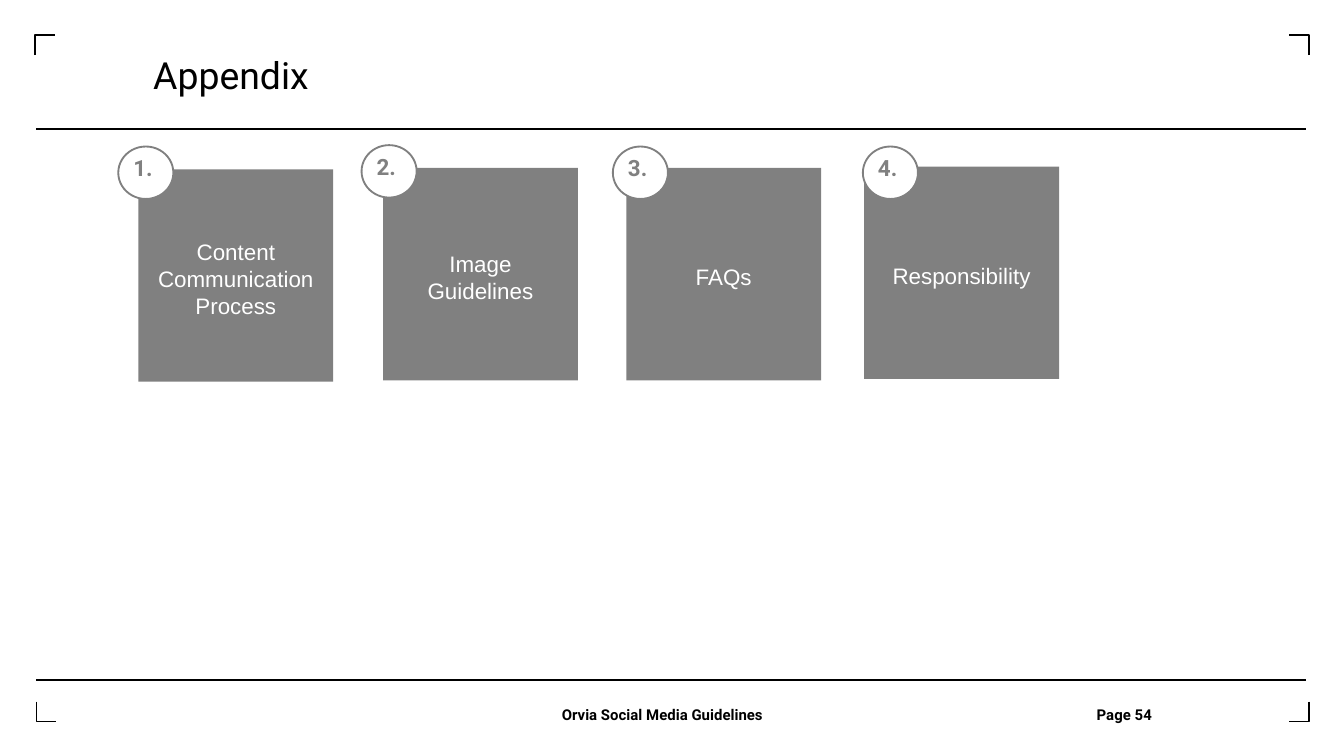
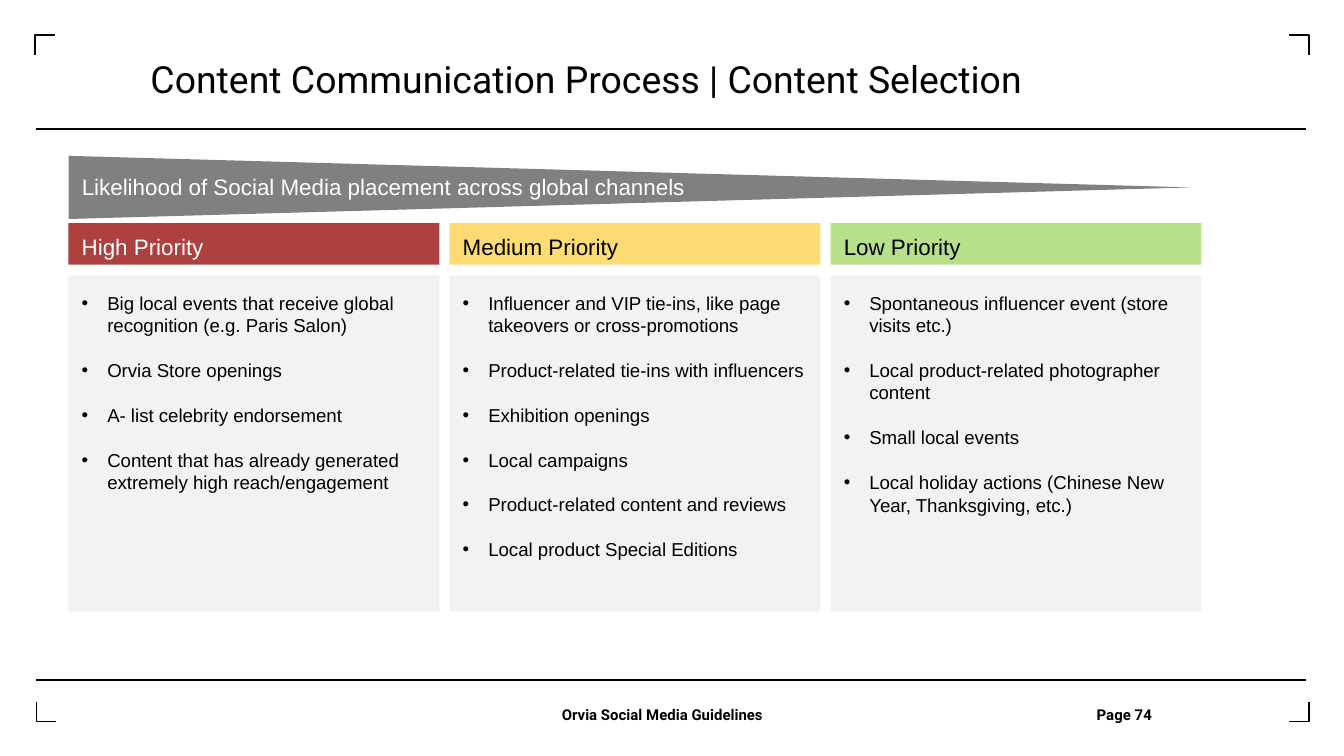
from lxml import etree
from pptx import Presentation
from pptx.dml.color import RGBColor
from pptx.enum.shapes import MSO_CONNECTOR, MSO_SHAPE
from pptx.enum.text import MSO_ANCHOR, PP_ALIGN
from pptx.oxml.ns import qn
from pptx.util import Inches, Pt

BLACK = RGBColor(0x00, 0x00, 0x00)
WHITE = RGBColor(0xFF, 0xFF, 0xFF)
GRAY = RGBColor(0x80, 0x80, 0x80)
PANEL_GRAY = RGBColor(0xF2, 0xF2, 0xF2)
RED = RGBColor(0x9D, 0x1B, 0x19)
AMBER = RGBColor(0xFF, 0xC0, 0x00)
GREEN = RGBColor(0x92, 0xD0, 0x50)

RECTANGLE = MSO_SHAPE.RECTANGLE
OVAL = MSO_SHAPE.OVAL
TRIANGLE = MSO_SHAPE.ISOSCELES_TRIANGLE
STRAIGHT = MSO_CONNECTOR.STRAIGHT
LEFT, CENTER = PP_ALIGN.LEFT, PP_ALIGN.CENTER
TOP, MIDDLE = MSO_ANCHOR.TOP, MSO_ANCHOR.MIDDLE

TITLE_FONT = "Roboto"
BODY_FONT = "Arial"
NO_INSETS = (0, 0, 0, 0)
BOX_INSETS = (0.1, 0.12, 0.1, 0.08)
FOOTER = "Orvia Social Media Guidelines"
FOOTER_TABS = (3.63, 7.61)

TOPICS = [
    ("Content Communication Process", (1.03, 1.26), (0.88, 1.09)),
    ("Image Guidelines", (2.85, 1.25), (2.69, 1.08)),
    ("FAQs", (4.66, 1.25), (4.56, 1.09)),
    ("Responsibility", (6.43, 1.24), (6.42, 1.09)),
]

PRIORITIES = [
    ("High Priority", RED, 83, WHITE, [
        "Big local events that receive global recognition (e.g. Paris Salon)",
        "Orvia Store openings",
        "A- list celebrity endorsement",
        "Content that has already generated extremely high reach/engagement",
    ]),
    ("Medium Priority", AMBER, 55, BLACK, [
        "Influencer and VIP tie-ins, like page takeovers or cross-promotions",
        "Product-related tie-ins with influencers",
        "Exhibition openings",
        "Local campaigns",
        "Product-related content and reviews",
        "Local product Special Editions",
    ]),
    ("Low Priority", GREEN, 66, BLACK, [
        "Spontaneous influencer event (store visits etc.)",
        "Local product-related photographer content",
        "Small local events",
        "Local holiday actions (Chinese New Year, Thanksgiving, etc.)",
    ]),
]


def set_text(shape, lines, size, color, font=BODY_FONT, bold=False, align=LEFT,
             anchor=TOP, insets=NO_INSETS, prepare=None):
    frame = shape.text_frame
    frame.word_wrap = True
    frame.vertical_anchor = anchor
    (frame.margin_left, frame.margin_top,
     frame.margin_right, frame.margin_bottom) = [Inches(inset) for inset in insets]
    for index, line in enumerate(lines):
        paragraph = frame.paragraphs[0] if index == 0 else frame.add_paragraph()
        paragraph.text = line
        paragraph.alignment = align
        if prepare:
            prepare(paragraph, index)
        paragraph.font.name = font
        paragraph.font.size = Pt(size)
        paragraph.font.bold = bold
        paragraph.font.color.rgb = color


def add_text_box(slide, left, top, width, height, text, size, color, **options):
    box = slide.shapes.add_textbox(Inches(left), Inches(top), Inches(width), Inches(height))
    set_text(box, [text], size, color, **options)


def add_block(slide, kind, left, top, width, height, fill, line=None):
    shape = slide.shapes.add_shape(
        kind, Inches(left), Inches(top), Inches(width), Inches(height))
    shape.shadow.inherit = False
    shape.fill.solid()
    shape.fill.fore_color.rgb = fill
    if line is None:
        shape.line.fill.background()
    else:
        shape.line.color.rgb = line
        shape.line.width = Pt(1)
    return shape


def set_opacity(shape, percent):
    color = shape._element.spPr.find(qn("a:solidFill"))[0]
    etree.SubElement(color, qn("a:alpha")).set("val", str(percent * 1000))


def set_line_spacing(paragraph, index):
    paragraph.line_spacing = Pt(25.5)


def set_footer_tabs(paragraph, index):
    tab_list = etree.SubElement(paragraph._p.get_or_add_pPr(), qn("a:tabLst"))
    for position in FOOTER_TABS:
        tab = etree.SubElement(tab_list, qn("a:tab"))
        tab.set("pos", str(Inches(position)))
        tab.set("algn", "l")


def set_bullet(paragraph, index):
    if index:
        paragraph.space_before = Pt(12)
    properties = paragraph._p.get_or_add_pPr()
    properties.set("marL", str(Inches(0.19)))
    properties.set("indent", str(-Inches(0.19)))
    etree.SubElement(properties, qn("a:buFont")).set("typeface", BODY_FONT)
    etree.SubElement(properties, qn("a:buChar")).set("char", "•")


def add_rule(slide, left, right, top):
    rule = slide.shapes.add_connector(
        STRAIGHT, Inches(left), Inches(top), Inches(right), Inches(top))
    rule.line.color.rgb = BLACK
    rule.line.width = Pt(0.75)
    etree.SubElement(rule._element.spPr, qn("a:effectLst"))


def add_corner(slide, left, top, across, down):
    builder = slide.shapes.build_freeform(Inches(left), Inches(top + down))
    builder.add_line_segments(
        [(Inches(left), Inches(top)), (Inches(left + across), Inches(top))], close=False)
    corner = builder.convert_to_shape()
    corner.shadow.inherit = False
    corner.fill.background()
    corner.line.color.rgb = BLACK
    corner.line.width = Pt(0.75)


def add_frame(presentation, title, title_left, title_top, page):
    slide = presentation.slides.add_slide(presentation.slide_layouts[6])
    for top in (0.96, 5.06):
        add_rule(slide, 0.27, 9.72, top)
    arm = 0.15
    add_corner(slide, 0.26, 0.26, arm, arm)
    add_corner(slide, 0.27, 5.37, arm, -arm)
    add_corner(slide, 9.74, 0.26, -arm, arm)
    add_corner(slide, 9.74, 5.37, -arm, -arm)
    add_text_box(slide, title_left, title_top, 8.24, 0.63, title, 20, BLACK,
                 font=TITLE_FONT, prepare=set_line_spacing)
    add_text_box(slide, 0.55, 5.25, 8.91, 0.13, f"\t{FOOTER}\tPage {page}", 8, BLACK,
                 font=TITLE_FONT, bold=True, prepare=set_footer_tabs)
    return slide


def add_topic(slide, number, name, card_place, badge_place):
    card = add_block(slide, RECTANGLE, *card_place, 1.45, 1.58, GRAY)
    set_text(card, [name], 12, WHITE, align=CENTER, anchor=MIDDLE, insets=BOX_INSETS)
    badge = add_block(slide, OVAL, *badge_place, 0.41, 0.39, WHITE, GRAY)
    set_text(badge, [f"{number}."], 12, GRAY, font=TITLE_FONT, bold=True,
             align=CENTER, insets=(0, 0, 0.04, 0))


def add_likelihood_wedge(slide, left, top, width, height):
    wedge = add_block(slide, TRIANGLE, left + (width - height) / 2,
                      top + (height - width) / 2, height, width, GRAY)
    wedge.rotation = 90
    add_text_box(slide, left, top + 0.08, 5.12, 0.3,
                 "Likelihood of Social Media placement across global channels",
                 12, WHITE, insets=(0.1, 0.05, 0.1, 0.05))


def add_priority_column(slide, left, top, width, name, fill, opacity, color, items):
    panel = add_block(slide, RECTANGLE, left, top + 0.39, width, 2.5, PANEL_GRAY)
    set_text(panel, items, 10, BLACK, insets=BOX_INSETS, prepare=set_bullet)
    header = add_block(slide, RECTANGLE, left, top, width, 0.31, fill)
    set_opacity(header, opacity)
    set_text(header, [name], 12, color, anchor=MIDDLE, insets=BOX_INSETS)


def build_appendix(presentation):
    slide = add_frame(presentation, "Appendix", 1.14, 0.37, 54)
    for number, topic in enumerate(TOPICS, 1):
        add_topic(slide, number, *topic)


def build_content_selection(presentation):
    slide = add_frame(presentation, "Content Communication Process | Content Selection",
                      1.12, 0.4, 74)
    add_likelihood_wedge(slide, 0.51, 1.16, 8.35, 0.47)
    first_left, last_left = 0.51, 6.18
    column_step = (last_left - first_left) / (len(PRIORITIES) - 1)
    for index, priority in enumerate(PRIORITIES):
        add_priority_column(slide, first_left + index * column_step, 1.66, 2.76, *priority)


def main():
    presentation = Presentation()
    presentation.slide_width = Inches(10)
    presentation.slide_height = Inches(10) * 9 // 16
    build_appendix(presentation)
    build_content_selection(presentation)
    presentation.save("out.pptx")


if __name__ == "__main__":
    main()
